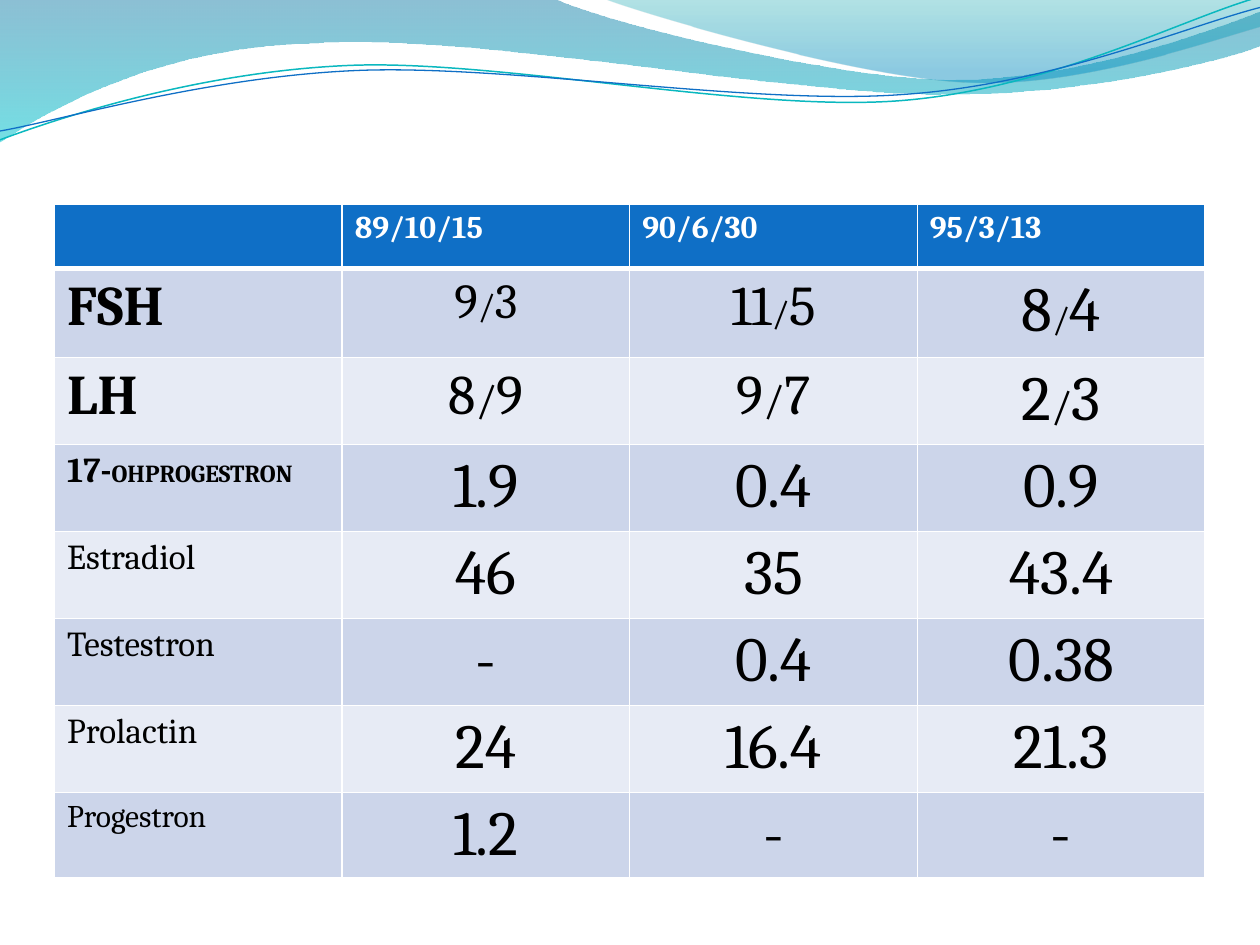
from dataclasses import dataclass
from math import cos, radians, sin

from lxml.etree import SubElement
from pptx import Presentation
from pptx.dml.color import RGBColor
from pptx.enum.text import PP_ALIGN
from pptx.oxml.ns import qn
from pptx.util import Pt


@dataclass(frozen=True)
class Theme:
    """Colours, font and type sizes of the deck."""
    font: str = "Cambria"
    white: str = "FFFFFF"
    ink: str = "000000"
    header: str = "0F6FC6"
    bands: tuple = ("CCD5EA", "E7EBF5")
    teal_line: str = "0AB8BF"
    wide_wave: tuple = ((0, "0074A1", 45), (1, "00C6CF", 55))
    right_wave: tuple = ((0, "00A1A9", 30), (0.8, "008BBF", 45))
    tiny: int = 14
    small: int = 18
    label: int = 20
    slash: int = 24
    medium: int = 28
    large: int = 32
    huge: int = 36


THEME = Theme()
UNITS_PER_POINT = 100
LINE_TILT = -2.7

WIDE_WAVE = [(0, 0), (316.8, -0.7),
             (342.7, 12.2, 478.1, 45.4, 545.8, 45.4),
             (614.2, 45.4, 689.8, 18.7, 720, 6.5), (720.7, 25.9),
             (707.8, 31.7, 626.4, 54.7, 537.1, 54),
             (447.8, 54, 275, 20.2, 185, 24.5),
             (92.9, 25.9, 33.1, 59.8, -0.7, 81.4), (0, 0)]
RIGHT_WAVE = [(344.9, -0.7), (366.5, 7.9, 491, 44.6, 553.7, 46.8),
              (616.3, 49.7, 691.9, 23, 720, 15.1), (720, 0), (344.9, -0.7)]
TEAL_LINE = [(0, 79.9), (34.6, 67, 113.8, 41, 199.4, 37.4),
             (284.4, 33.8, 427, 64.1, 513.4, 57.6),
             (599.8, 51.1, 675.4, 10.8, 718.6, -1.4)]
BLUE_LINE = [(0, 74.9), (33.8, 69.1, 118.1, 43.9, 203.8, 40.3),
             (290.2, 36.7, 430.6, 60.5, 516.2, 54),
             (601.9, 48.2, 677.5, 15.1, 720, 4.3)]

DATES = ("89/10/15", "90/6/30", "95/3/13")
LABELS = (
    ([("FSH", THEME.large)], True),
    ([("LH", THEME.large)], True),
    ([("17-", THEME.label), ("OHPROGESTRON", THEME.tiny)], True),
    ([("Estradiol", THEME.label)], False),
    ([("Testestron", THEME.label)], False),
    ([("Prolactin", THEME.label)], False),
    ([("Progestron", THEME.small)], False),
)
RATIOS = (
    (("9/3", "11/5", "8/4"), (THEME.medium, THEME.large, THEME.huge), THEME.label),
    (("8/9", "9/7", "2/3"), (THEME.large, THEME.large, THEME.huge), THEME.slash),
)
READINGS = (("1.9", "0.4", "0.9"), ("46", "35", "43.4"), ("-", "0.4", "0.38"),
            ("24", "16.4", "21.3"), ("1.2", "-", "-"))


def turn(segment, center, degrees):
    """Rotate the points of a segment about a center."""
    angle = radians(degrees)
    turned = []
    for x, y in zip(segment[::2], segment[1::2]):
        across, down = x - center[0], y - center[1]
        turned += [center[0] + across * cos(angle) - down * sin(angle),
                   center[1] + across * sin(angle) + down * cos(angle)]
    return tuple(turned)


def add_outline(page, box, segments, close):
    """Draw lines and cubic curves as one freeform offset by the box."""
    points = [((box[0] + x) * UNITS_PER_POINT, (box[1] + y) * UNITS_PER_POINT)
              for segment in segments for x, y in zip(segment[::2], segment[1::2])]
    builder = page.shapes.build_freeform(*points[0], scale=Pt(1) / UNITS_PER_POINT)
    builder.add_line_segments(points[1:], close=close)
    shape = builder.convert_to_shape()
    shape.shadow.inherit = False
    steps = iter(shape._element.xpath(".//a:path/a:lnTo"))
    for segment in segments[1:]:
        first = next(steps)
        if len(segment) == 6:
            curve = first.makeelement(qn("a:cubicBezTo"))
            first.addprevious(curve)
            for step in (first, next(steps), next(steps)):
                curve.append(step[0])
                step.getparent().remove(step)
    return shape


def add_wave(page, box, segments, stops):
    """Draw a wave with a translucent vertical gradient."""
    shape = add_outline(page, box, segments, True)
    shape.line.fill.background()
    shape.fill.gradient()
    shape.fill.gradient_angle = 270
    for stop, (position, colour, _) in zip(shape.fill.gradient_stops, stops):
        stop.position = position
        stop.color.rgb = RGBColor.from_string(colour)
    tints = shape._element.xpath(".//a:gs/a:srgbClr")
    for tint, (_, _, opacity) in zip(tints, stops):
        SubElement(tint, qn("a:alpha"), val=str(opacity * 1000))


def add_wave_line(page, box, segments, center, colour, width):
    """Draw one thin unfilled wave line, tilted about its center."""
    level = [turn(segment, center, -LINE_TILT) for segment in segments]
    shape = add_outline(page, box, level, False)
    shape.rotation = LINE_TILT
    shape.fill.background()
    shape.line.color.rgb = RGBColor.from_string(colour)
    shape.line.width = Pt(width)


def add_wave_banner(page, box):
    """Draw the decorative waves at the top of the page."""
    add_wave(page, box, WIDE_WAVE, THEME.wide_wave)
    add_wave(page, box, RIGHT_WAVE, THEME.right_wave)
    add_wave_line(page, box, TEAL_LINE, (359.3, 41.4), THEME.teal_line, 0.85)
    add_wave_line(page, box, BLUE_LINE, (359.6, 42.5), THEME.header, 0.75)


def style_cell(cell, fill, bottom_width):
    """Give a cell white borders and a solid fill."""
    properties = cell._tc.get_or_add_tcPr()
    for side, width in (("L", 1), ("R", 1), ("T", 1), ("B", bottom_width)):
        border = SubElement(properties, qn(f"a:ln{side}"), w=str(Pt(width)))
        solid = SubElement(border, qn("a:solidFill"))
        SubElement(solid, qn("a:srgbClr"), val=THEME.white)
    cell.fill.solid()
    cell.fill.fore_color.rgb = RGBColor.from_string(fill)


def write_cell(cell, spans, colour, bold, align=PP_ALIGN.LEFT):
    """Write sized spans of text into a cell."""
    para = cell.text_frame.paragraphs[0]
    para.alignment = align
    for text, size in spans:
        span = para.add_run()
        span.text = text
        span.font.name = THEME.font
        span.font.size = Pt(size)
        span.font.bold = bold
        span.font.color.rgb = RGBColor.from_string(colour)


def ratio_spans(text, size, slash_size):
    """Split a ratio so that its slash has its own size."""
    first, slash, second = text.partition("/")
    return [(first, size), (slash, slash_size), (second, size)]


def value_rows():
    """Return the spans of every value, row by row."""
    ratios = [[ratio_spans(text, size, slash_size) for text, size in zip(texts, sizes)]
              for texts, sizes, slash_size in RATIOS]
    return ratios + [[[(text, THEME.huge)] for text in row] for row in READINGS]


def add_hormone_table(page, box, heights):
    """Place the table of hormone values in the box."""
    table = page.shapes.add_table(len(heights), len(DATES) + 1,
                                  *(Pt(length) for length in box)).table
    for row, row_height in zip(table.rows, heights):
        row.height = Pt(row_height)
    for index, row in enumerate(table.rows):
        fill = THEME.bands[(index - 1) % 2] if index else THEME.header
        for cell in row.cells:
            style_cell(cell, fill, 1 if index else 3)
    for column, date in enumerate(DATES, 1):
        write_cell(table.cell(0, column), [(date, THEME.small)], THEME.white, True)
    for row, ((label, bold), values) in enumerate(zip(LABELS, value_rows()), 1):
        write_cell(table.cell(row, 0), label, THEME.ink, bold)
        for column, spans in enumerate(values, 1):
            write_cell(table.cell(row, column), spans, THEME.ink, False, PP_ALIGN.CENTER)


def main():
    """Build and save the deck."""
    deck = Presentation()
    deck.slide_width, deck.slide_height = Pt(720), Pt(540)
    page = deck.slides.add_slide(deck.slide_layouts[6])
    add_wave_banner(page, (0, 0))
    add_hormone_table(page, (31.2, 116.7, 657.4, 390), [36.7, 51] + [49.7] * 5 + [36.7])
    deck.save("out.pptx")


if __name__ == "__main__":
    main()
